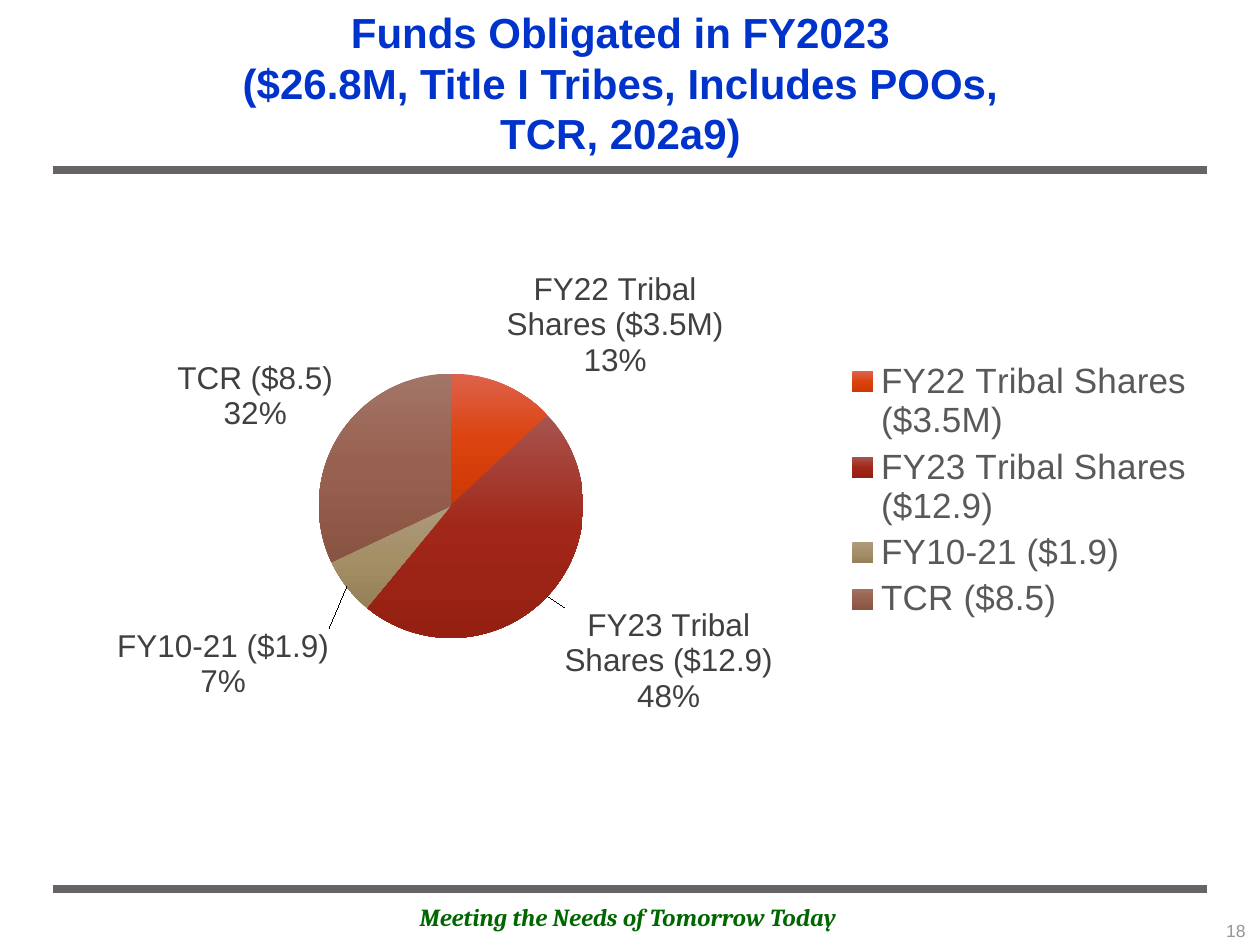
"""Build the slide on funds obligated in FY2023."""
from lxml import etree
from pptx import Presentation, util as u
from pptx.chart.data import CategoryChartData
from pptx.dml.color import RGBColor
from pptx.enum import chart as ch, shapes, text
from pptx.oxml import parse_xml
from pptx.oxml.ns import nsdecls, qn

PX = 914400 // 126
COLORS = {"rule": "696464", "title": "0033CC", "motto": "006600", "number": "969696",
          "legend": "595959", "label": "404040"}
SHARES = [
    ("FY22 Tribal Shares ($3.5M)", 13, ("DD624D", "DC430E", "CC3804")),
    ("FY23 Tribal Shares ($12.9)", 48, ("A8544F", "A12819", "951F11")),
    ("FY10-21 ($1.9)", 7, ("AC9A7C", "A58F67", "968059")),
    ("TCR ($8.5)", 32, ("A27568", "98604E", "8A5442")),
]
LABEL_SHIFTS = {1: (0.01, 0.01), 2: (-0.01, 0.06)}


def px(*values):
    return [u.Emu(v * PX) for v in values]


def style(font, size, color, name="Arial", bold=False, italic=False):
    font.size, font.name = u.Pt(size), name
    font.bold, font.italic = bold, italic
    font.color.rgb = RGBColor.from_string(COLORS[color])


def add_text(s, box, content, align="CENTER", anchor="TOP", **fmt):
    tf = s.shapes.add_textbox(*px(*box)).text_frame
    tf.word_wrap = True
    tf.vertical_anchor = getattr(text.MSO_ANCHOR, anchor)
    p = tf.paragraphs[0]
    p.text = content
    p.alignment = getattr(text.PP_ALIGN, align)
    for r in p.runs:
        style(r.font, **fmt)


def add_rule(s, y):
    sp = s.shapes.add_connector(shapes.MSO_CONNECTOR.STRAIGHT, *px(53, y, 1207, y))
    sp.line.color.rgb = RGBColor.from_string(COLORS["rule"])
    sp.line.width = u.Pt(4.5)
    etree.SubElement(sp._element.spPr, qn("a:effectLst"))


def layout(x, y, w=None, h=None, inner=False):
    modes = "" if w is None else '<c:xMode val="edge"/><c:yMode val="edge"/>'
    target = '<c:layoutTarget val="inner"/>' if inner else ""
    sizes = "" if w is None else f'<c:w val="{w}"/><c:h val="{h}"/>'
    return parse_xml(f'<c:layout {nsdecls("c")}><c:manualLayout>{target}{modes}'
                     f'<c:x val="{x}"/><c:y val="{y}"/>{sizes}</c:manualLayout></c:layout>')


def set_layout(parent, index, new):
    old = parent.find(qn("c:layout"))
    if old is not None:
        parent.remove(old)
    parent.insert(index, new)


def fill_slice(point, colors):
    stops = "".join(f'<a:gs pos="{i * 50000}"><a:srgbClr val="{c}"/></a:gs>'
                    for i, c in enumerate(colors))
    point.format.line.fill.background()
    sp_pr = point.format.fill._xPr
    sp_pr.insert(0, parse_xml(f'<a:gradFill {nsdecls("a")} rotWithShape="1"><a:gsLst>{stops}'
                              '</a:gsLst><a:lin ang="5400000" scaled="0"/></a:gradFill>'))


def shift_label(plot, index, shift):
    label = plot.series[0].points[index].data_label
    style(label.font, 18, "label")
    label.position = ch.XL_LABEL_POSITION.OUTSIDE_END
    d = plot.series[0]._element.xpath(f'c:dLbls/c:dLbl[c:idx/@val="{index}"]')[0]
    for tag, on in (("showVal", 0), ("showCatName", 1), ("showPercent", 1)):
        d.find(qn(f"c:{tag}")).set("val", str(on))
    set_layout(d, 1, layout(*shift))


def add_pie(s, box):
    data = CategoryChartData()
    data.categories = [name for name, _, _ in SHARES]
    data.add_series("Series 1", [value for _, value, _ in SHARES])
    chart = s.shapes.add_chart(ch.XL_CHART_TYPE.PIE, *px(*box), data).chart
    chart.has_title = False
    chart.font.size, chart.font.name = u.Pt(10), "Arial"
    chart.has_legend = True
    legend = chart.legend
    legend.position = ch.XL_LEGEND_POSITION.RIGHT
    legend.include_in_layout = False
    style(legend.font, 20, "legend")
    set_layout(legend._element, 1, layout(0.69, 0.28, 0.3, 0.44))
    plot = chart.plots[0]
    plot.vary_by_categories = True
    labels = plot.series[0].data_labels
    labels.show_value = False
    labels.show_category_name = labels.show_percentage = True
    labels.number_format, labels.number_format_is_linked = "0%", False
    labels.position = ch.XL_LABEL_POSITION.OUTSIDE_END
    style(labels.font, 18, "label")
    for i, (_, _, colors) in enumerate(SHARES):
        fill_slice(plot.series[0].points[i], colors)
    for i, shift in LABEL_SHIFTS.items():
        shift_label(plot, i, shift)
    area = chart._chartSpace.chart.plotArea
    set_layout(area, 0, layout(0.24, 0.31, 0.23, 0.43, inner=True))


def main():
    prs = Presentation()
    prs.slide_width, prs.slide_height = px(1260, 945)
    s = prs.slides.add_slide(prs.slide_layouts[6])
    for y in (889, 170):
        add_rule(s, y)
    add_text(s, (155, 896, 946, 43), "Meeting the Needs of Tomorrow Today", size=14,
             color="motto", name="Cambria", bold=True, italic=True)
    add_text(s, (184, 37, 873, 91),
             "Funds Obligated in FY2023\v($26.8M, Title I Tribes, Includes POOs, TCR, 202a9)",
             anchor="MIDDLE", size=24, color="title", bold=True)
    add_text(s, (1101, 914, 157, 42), "18", align="RIGHT", size=10, color="number")
    add_pie(s, (35, 183, 1172, 615))
    prs.save("out.pptx")


if __name__ == "__main__":
    main()
